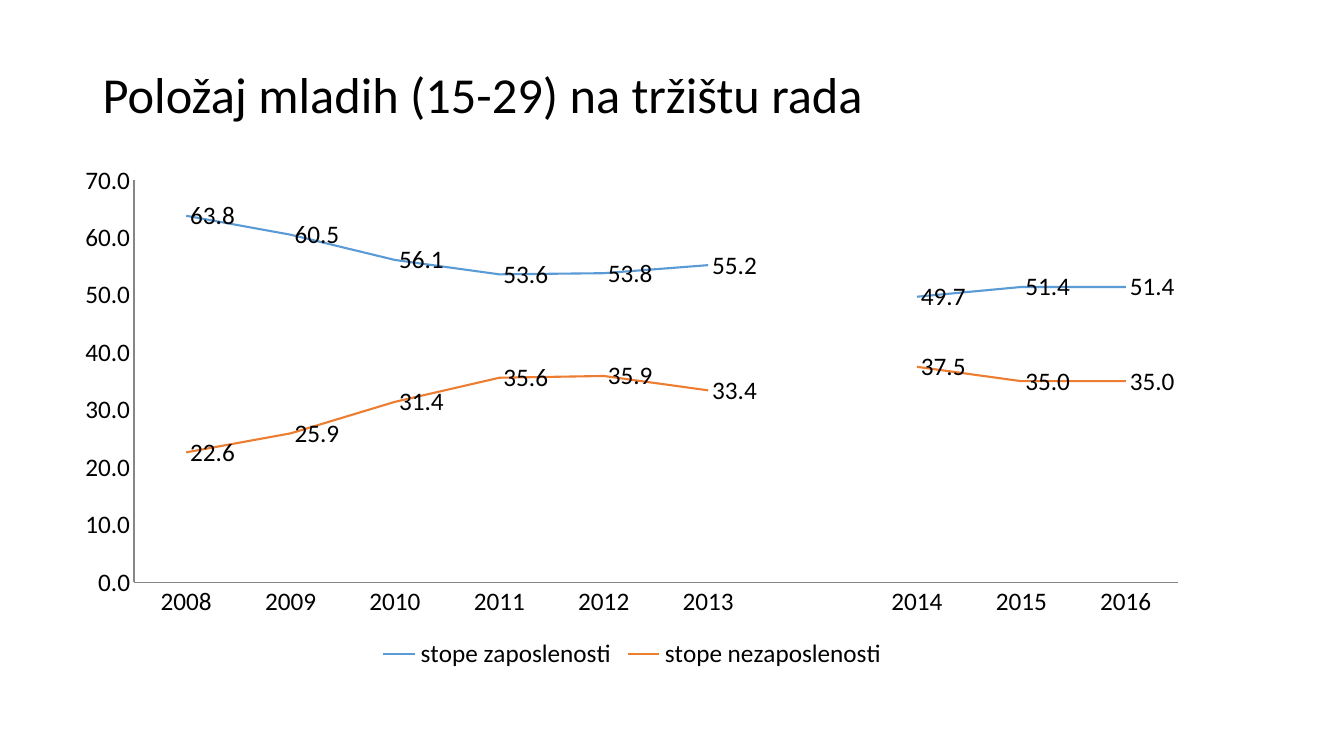
from lxml import etree
from pptx import Presentation
from pptx import util as u
from pptx.chart.data import CategoryChartData
from pptx.dml.color import RGBColor
from pptx.enum import chart as ch, text
from pptx.oxml.ns import qn

THEME = {
    "font": "Calibri",
    "ink": RGBColor.from_string("000000"),
    "axis": RGBColor.from_string("868686"),
    "title": u.Pt(36),
    "body": u.Pt(18),
    "line": u.Pt(1.5),
}
RATES = [
    ("stope zaposlenosti", "5B9BD5",
     (63.8, 60.5, 56.1, 53.6, 53.8, 55.2, None, 49.7, 51.4, 51.4)),
    ("stope nezaposlenosti", "ED7D31",
     (22.6, 25.9, 31.4, 35.6, 35.9, 33.4, None, 37.5, 35.0, 35.0)),
]
YEARS = ["2008", "2009", "2010", "2011", "2012", "2013", "", "2014", "2015", "2016"]
NUMBER_FORMAT = "###0.0"


def style(font, size):
    font.name, font.size, font.color.rgb = THEME["font"], size, THEME["ink"]


deck = Presentation()
deck.slide_width, deck.slide_height = u.Inches(13.33), u.Inches(7.5)
slide = deck.slides.add_slide(deck.slide_layouts[6])

# Title
title = slide.shapes.add_textbox(u.Inches(0.92), u.Inches(0.4), u.Inches(11.5), u.Inches(1.13))
heading = title.text_frame
heading.word_wrap = True
heading.vertical_anchor = text.MSO_ANCHOR.MIDDLE
heading.text = "Položaj mladih (15-29) na tržištu rada"
heading.paragraphs[0].line_spacing = 0.9
style(heading.paragraphs[0].runs[0].font, THEME["title"])

# Line chart with a gap between 2013 and 2014
rates = CategoryChartData(number_format=NUMBER_FORMAT)
rates.categories = YEARS
for name, _, values in RATES:
    rates.add_series(name, values)
chart = slide.shapes.add_chart(
    ch.XL_CHART_TYPE.LINE, u.Inches(0.63), u.Inches(1.53),
    u.Inches(11.28), u.Inches(5.16), rates).chart
chart.has_title = False
style(chart.font, THEME["body"])
chart.plots[0].vary_by_categories = False

# Legend
chart.has_legend = True
chart.legend.position = ch.XL_LEGEND_POSITION.BOTTOM
chart.legend.include_in_layout = False
style(chart.legend.font, THEME["body"])

# Axes
for axis in (chart.category_axis, chart.value_axis):
    axis.has_major_gridlines = False
    axis.major_tick_mark = axis.minor_tick_mark = ch.XL_TICK_MARK.NONE
    axis.format.line.color.rgb = THEME["axis"]
    axis.format.line.width = u.Pt(0.75)
    style(axis.tick_labels.font, THEME["body"])
rate_axis = chart.value_axis
rate_axis.minimum_scale, rate_axis.maximum_scale, rate_axis.major_unit = 0, 70, 10
rate_axis.tick_labels.number_format = NUMBER_FORMAT
rate_axis.tick_labels.number_format_is_linked = False

# Series lines and value labels
for series, (_, color, _) in zip(chart.plots[0].series, RATES):
    series.smooth = False
    series.marker.style = ch.XL_MARKER_STYLE.NONE
    series.format.line.color.rgb = RGBColor.from_string(color)
    series.format.line.width = THEME["line"]
    labels = series.data_labels
    labels.show_value = True
    labels.position = ch.XL_LABEL_POSITION.RIGHT
    labels.number_format, labels.number_format_is_linked = NUMBER_FORMAT, False
    style(labels.font, THEME["body"])

# Plot area as shares of the chart frame
plot_area = chart.plots[0]._element.getparent()
for old_layout in plot_area.findall(qn("c:layout")):
    plot_area.remove(old_layout)
layout = etree.Element(qn("c:layout"))
manual = etree.SubElement(layout, qn("c:manualLayout"))
for tag, value in (("layoutTarget", "inner"), ("xMode", "edge"), ("yMode", "edge"),
                   ("x", "0.062"), ("y", "0.05"), ("w", "0.918"), ("h", "0.773")):
    etree.SubElement(manual, qn("c:" + tag)).set("val", value)
plot_area.insert(0, layout)

deck.save("out.pptx")
